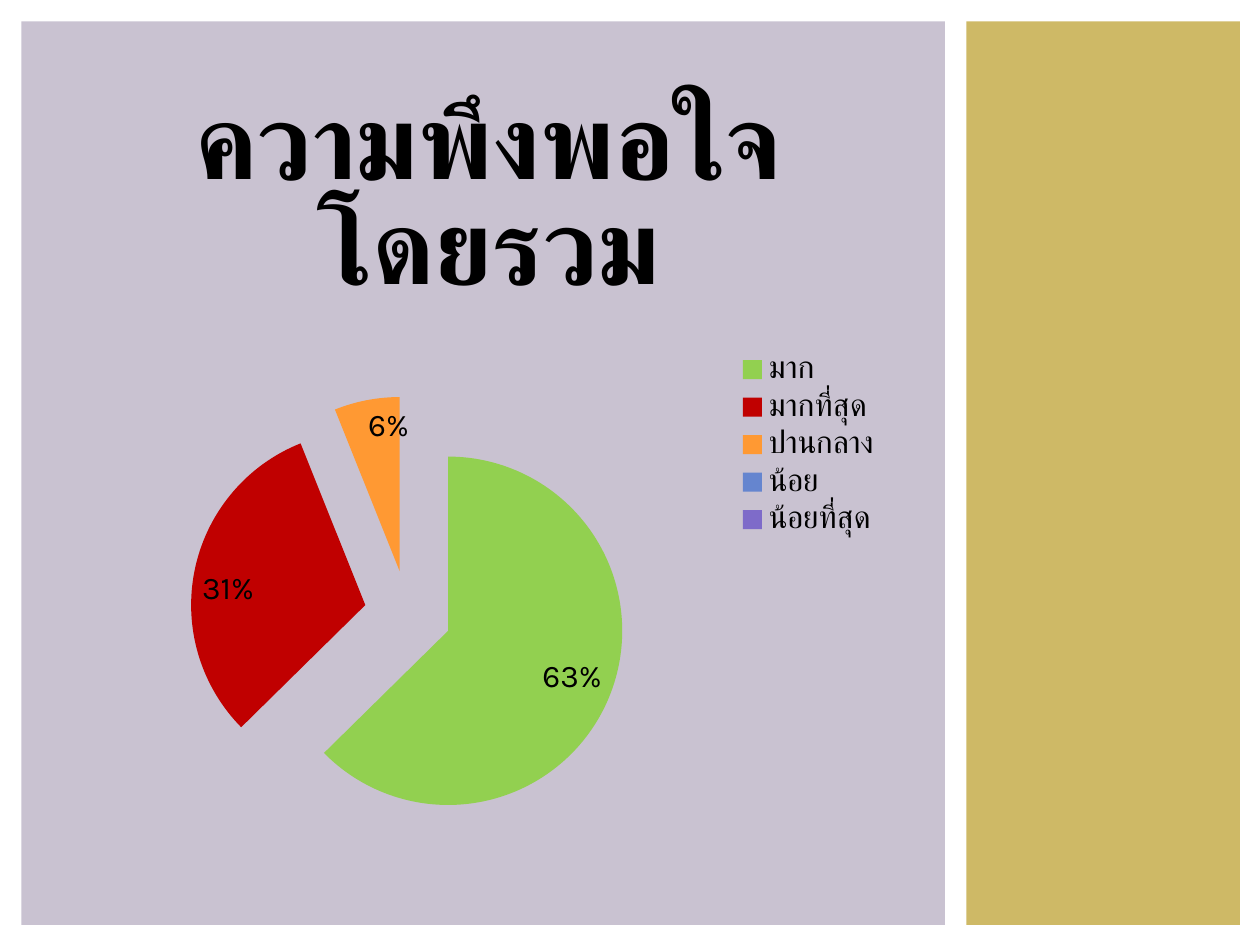
"""Build the overall satisfaction slide with an exploded pie chart."""
from lxml.etree import SubElement
from pptx import Presentation
from pptx.chart.data import CategoryChartData
from pptx.dml.color import RGBColor
from pptx.enum.chart import XL_CHART_TYPE as ChartType
from pptx.enum.chart import XL_LABEL_POSITION as LabelPosition
from pptx.enum.chart import XL_LEGEND_POSITION as LegendPosition
from pptx.enum.shapes import MSO_SHAPE as Preset
from pptx.oxml import parse_xml
from pptx.oxml.ns import nsdecls, qn
from pptx.util import Inches, Pt

COLORS = {
    "frame": "FFFFFF", "side": "CEB966", "main": "C9C2D1", "text": "000000",
    "มาก": "92D050", "มากที่สุด": "C00000", "ปานกลาง": "FF9933",
    "น้อย": "6585CF", "น้อยที่สุด": "7E6BC9",
}
RATINGS = {"มาก": 62, "มากที่สุด": 31, "ปานกลาง": 6, "น้อย": 0, "น้อยที่สุด": None}


class SatisfactionSlide:
    def __init__(self, slide):
        self.slide = slide
        self.font_name = "Karla"

    def color(self, key):
        return RGBColor.from_string(COLORS[key])

    def style(self, font, size, bold=False):
        font.name = self.font_name
        font.size = Pt(size)
        font.bold = bold
        font.color.rgb = self.color("text")

    def panel(self, key, left, top, width, height):
        panel = self.slide.shapes.add_shape(
            Preset.RECTANGLE, Inches(left), Inches(top), Inches(width), Inches(height))
        panel.shadow.inherit = False
        panel.fill.solid()
        panel.fill.fore_color.rgb = self.color(key)
        panel.line.fill.background()

    def place(self, element, x, y, w, h, inner=False):
        layout = element.find(qn("c:layout"))
        if layout is None:
            layout = parse_xml(f"<c:layout {nsdecls('c')}/>")
            overlay = element.find(qn("c:overlay"))
            if overlay is None:
                element.insert(0, layout)
            else:
                overlay.addprevious(layout)
        manual = SubElement(layout, qn("c:manualLayout"))
        settings = [("layoutTarget", "inner")] if inner else []
        settings += [("xMode", "edge"), ("yMode", "edge"),
                     ("x", x), ("y", y), ("w", w), ("h", h)]
        for tag, value in settings:
            SubElement(manual, qn(f"c:{tag}")).set("val", str(value))

    def pie(self, title, ratings, left, top, width, height):
        data = CategoryChartData()
        data.categories = list(ratings)
        data.add_series("Series 1", list(ratings.values()))
        chart = self.slide.shapes.add_chart(
            ChartType.PIE, Inches(left), Inches(top), Inches(width), Inches(height),
            data).chart
        self.style(chart.font, 18)
        chart.has_title = True
        heading = chart.chart_title.text_frame.paragraphs[0].add_run()
        heading.text = title
        self.style(heading.font, 60, bold=True)

        chart.has_legend = True
        chart.legend.position = LegendPosition.RIGHT
        chart.legend.include_in_layout = False
        self.style(chart.legend.font, 18)

        plot = chart.plots[0]
        plot.vary_by_categories = True
        series = plot.series[0]
        for index, rating in enumerate(ratings):
            fill = series.points[index].format.fill
            fill.solid()
            fill.fore_color.rgb = self.color(rating)
        explosion = parse_xml(f'<c:explosion {nsdecls("c")} val="25"/>')
        series._element.find(qn("c:dPt")).addprevious(explosion)

        labels = series.data_labels
        labels.show_percentage = True
        labels.show_value = False
        labels.number_format = "0%"
        labels.number_format_is_linked = False
        labels.position = LabelPosition.INSIDE_END
        self.style(labels.font, 18)
        empty = [index for index, value in enumerate(ratings.values()) if not value]
        for slot, index in enumerate(empty):
            hidden = parse_xml(f'<c:dLbl {nsdecls("c")}><c:idx val="{index}"/>'
                               '<c:delete val="1"/></c:dLbl>')
            labels._element.insert(slot, hidden)

        self.place(plot._element.getparent(), 0.13, 0.44, 0.54, 0.54, inner=True)
        self.place(chart.legend._element, 0.8, 0.38, 0.19, 0.24)


def main():
    deck = Presentation()
    deck.slide_width, deck.slide_height = Inches(10), Inches(7.5)
    page = SatisfactionSlide(deck.slides.add_slide(deck.slide_layouts[6]))
    page.panel("frame", 0, 0, 10, 7.5)
    page.panel("side", 7.67, 0.17, 2.17, 7.17)
    page.panel("main", 0.17, 0.17, 7.33, 7.17)
    page.pie("ความพึงพอใจโดยรวม", RATINGS, 0.67, 0.33, 6.42, 6.4)
    deck.save("out.pptx")


if __name__ == "__main__":
    main()
